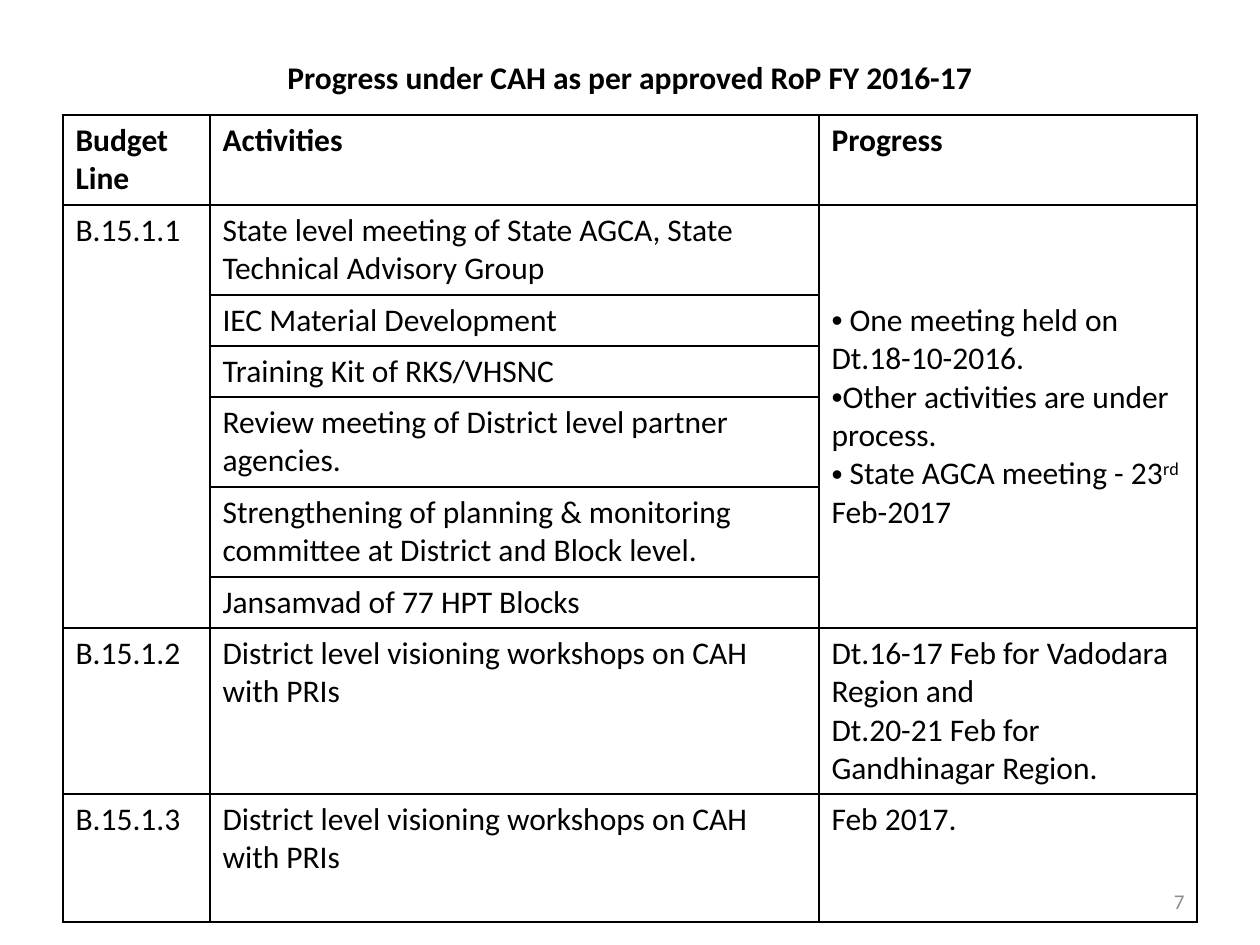
from pptx import Presentation
from pptx.dml.color import RGBColor
from pptx.enum.text import MSO_ANCHOR as Anchor, PP_ALIGN as Align
from pptx.oxml.ns import qn
from pptx.util import Pt
from lxml.etree import SubElement

PX = 914400 // 126
BLACK, WHITE, GREY = "000000", "FFFFFF", "8C8C8C"
COLUMN_WIDTHS = [147, 609, 378]
ONE_LINE, TWO_LINES = 51, 90
ROW_HEIGHTS = [TWO_LINES, TWO_LINES, ONE_LINE, ONE_LINE, TWO_LINES,
               TWO_LINES, ONE_LINE, 166, 128]
HEADINGS = ["Budget Line", "Activities", "Progress"]
STATE_ACTIVITIES = [
    "State level meeting of State AGCA, State Technical Advisory Group",
    "IEC Material Development",
    "Training Kit of RKS/VHSNC",
    "Review meeting of District level partner agencies.",
    "Strengthening of planning & monitoring committee at District and Block level.",
    "Jansamvad of 77 HPT Blocks",
]
STATE_PROGRESS = [
    [" One meeting held on Dt.18-10-2016."],
    ["Other activities are under process."],
    [" State AGCA meeting - 23", ("rd ", 30), "Feb-2017"],
]
WORKSHOPS = "District level visioning workshops on CAH with PRIs"
WORKSHOP_ROWS = [
    ("B.15.1.2", WORKSHOPS, [["Dt.16-17 Feb for Vadodara Region and"],
                             ["Dt.20-21 Feb for Gandhinagar Region."]]),
    ("B.15.1.3", WORKSHOPS, "Feb 2017."),
]


def px(*lengths):
    return [length * PX for length in lengths]


def color(value):
    return RGBColor.from_string(value)


def add_bullet(paragraph):
    properties = paragraph._p.get_or_add_pPr()
    properties.set("marL", "0")
    properties.set("indent", "0")
    SubElement(properties, qn("a:buFont"), typeface="Arial")
    SubElement(properties, qn("a:buChar"), char="•")


def write(frame, text, size=18, ink=BLACK, bold=False, align=Align.LEFT, bullet=False):
    frame.word_wrap = True
    lines = [[text]] if isinstance(text, str) else text
    for index, line in enumerate(lines):
        paragraph = frame.add_paragraph() if index else frame.paragraphs[0]
        paragraph.alignment = align
        if bullet:
            add_bullet(paragraph)
        for part in line:
            words, baseline = (part, 0) if isinstance(part, str) else part
            run = paragraph.add_run()
            run.text = words
            run.font.name = "Calibri"
            run.font.size = Pt(size)
            run.font.bold = bold
            run.font.color.rgb = color(ink)
            if baseline:
                run.font._element.set("baseline", str(baseline * 1000))


def add_label(slide, box, text, **style):
    frame = slide.shapes.add_textbox(*px(*box)).text_frame
    frame.vertical_anchor = Anchor.MIDDLE
    write(frame, text, **style)


def style_cell(cell):
    properties = cell._tc.get_or_add_tcPr()
    for side in ("lnL", "lnR", "lnT", "lnB"):
        border = SubElement(properties, qn(f"a:{side}"), w=str(Pt(1)))
        fill = SubElement(border, qn("a:solidFill"))
        SubElement(fill, qn("a:srgbClr"), val=BLACK)
    cell.fill.solid()
    cell.fill.fore_color.rgb = color(WHITE)


def add_grid(slide, left, top):
    size = px(left, top, sum(COLUMN_WIDTHS), sum(ROW_HEIGHTS))
    table = slide.shapes.add_table(len(ROW_HEIGHTS), len(COLUMN_WIDTHS), *size).table
    for column, width in zip(table.columns, px(*COLUMN_WIDTHS)):
        column.width = width
    for row, height in zip(table.rows, px(*ROW_HEIGHTS)):
        row.height = height
    for cell in table.iter_cells():
        style_cell(cell)
    return table


def fill_progress(table):
    for column, heading in enumerate(HEADINGS):
        write(table.cell(0, column).text_frame, heading, bold=True)

    last_state_row = len(STATE_ACTIVITIES)
    for column in (0, 2):
        table.cell(1, column).merge(table.cell(last_state_row, column))
    write(table.cell(1, 0).text_frame, "B.15.1.1")
    for row, activity in enumerate(STATE_ACTIVITIES, 1):
        write(table.cell(row, 1).text_frame, activity)
    progress = table.cell(1, 2)
    progress.vertical_anchor = Anchor.MIDDLE
    write(progress.text_frame, STATE_PROGRESS, bullet=True)

    for row, entries in enumerate(WORKSHOP_ROWS, last_state_row + 1):
        for column, entry in enumerate(entries):
            write(table.cell(row, column).text_frame, entry)


def main():
    deck = Presentation()
    deck.slide_width, deck.slide_height = px(1260, 945)
    slide = deck.slides.add_slide(deck.slide_layouts[6])
    add_label(slide, (63, 38, 1134, 78), "Progress under CAH as per approved RoP FY 2016-17",
              bold=True, align=Align.CENTER)
    fill_progress(add_grid(slide, 63, 115))
    add_label(slide, (903, 876, 294, 50), "7", size=12, ink=GREY, align=Align.RIGHT)
    deck.save("out.pptx")


if __name__ == "__main__":
    main()
